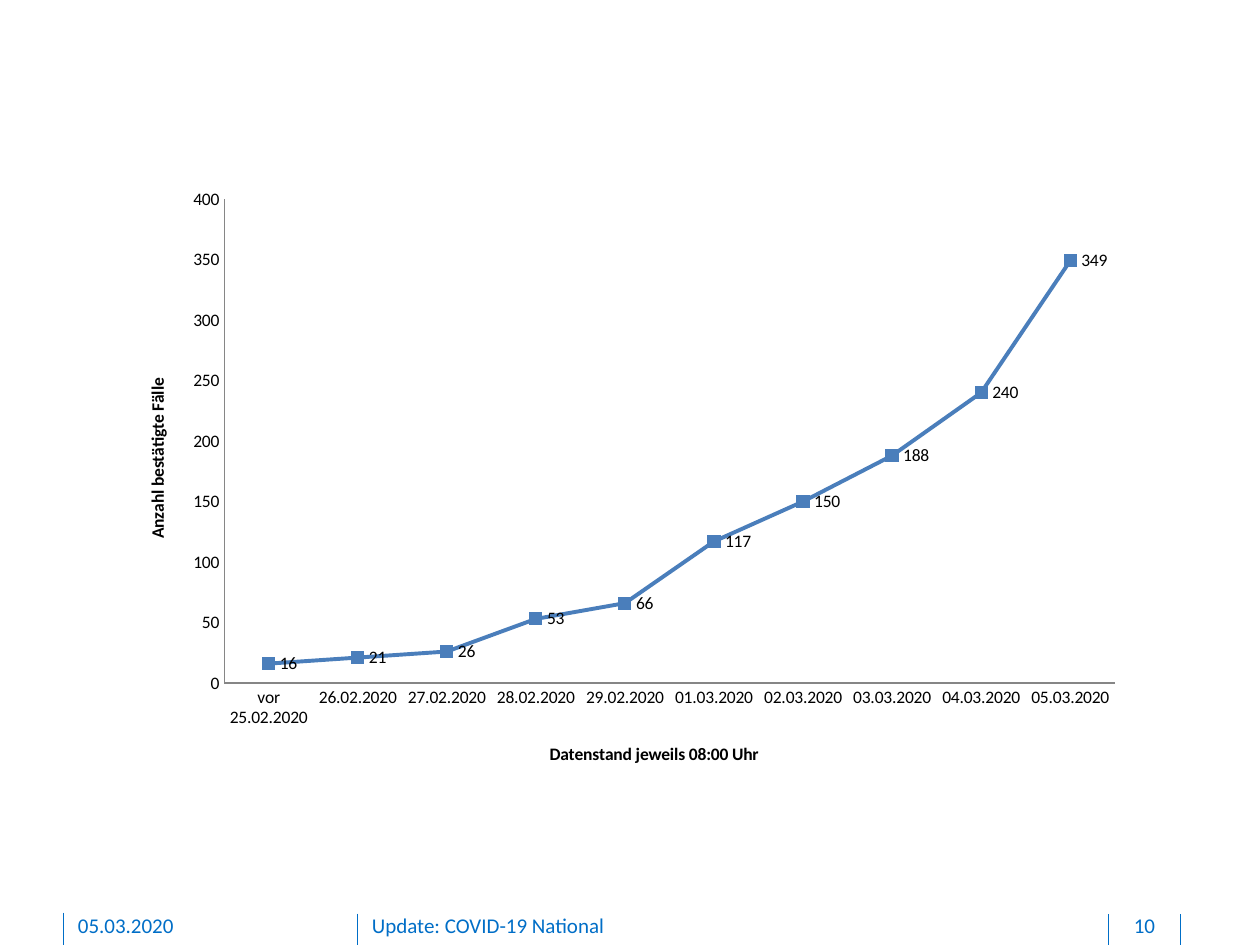
from dataclasses import dataclass

from lxml import etree
from pptx import Presentation
from pptx.chart.data import CategoryChartData
from pptx.dml.color import RGBColor
from pptx.enum.chart import XL_CHART_TYPE as ChartType
from pptx.enum.chart import XL_LABEL_POSITION as LabelPosition
from pptx.enum.chart import XL_MARKER_STYLE as MarkerStyle
from pptx.enum.chart import XL_TICK_MARK as TickMark
from pptx.enum.shapes import MSO_CONNECTOR as Connector
from pptx.enum.text import PP_ALIGN as Align
from pptx.oxml import parse_xml
from pptx.oxml.ns import nsdecls, qn
from pptx.util import Pt


@dataclass(frozen=True)
class Theme:
    font: str = "Calibri"
    footer: RGBColor = RGBColor(0x00, 0x6E, 0xC7)
    text: RGBColor = RGBColor(0x00, 0x00, 0x00)
    line: RGBColor = RGBColor(0x4A, 0x7E, 0xBB)
    marker: RGBColor = RGBColor(0x4F, 0x81, 0xBD)
    axis: RGBColor = RGBColor(0x86, 0x86, 0x86)
    footer_size: Pt = Pt(12)
    chart_size: Pt = Pt(10)


theme = Theme()
presentation = Presentation()
presentation.slide_width, presentation.slide_height = Pt(720), Pt(540)
slide = presentation.slides.add_slide(presentation.slide_layouts[6])

# Footer dividers, running to the lower edge of the slide
for x, top in [(204.5, 522), (36, 521.5), (674.5, 522.5), (633.5, 522.5)]:
    divider = slide.shapes.add_connector(Connector.STRAIGHT, Pt(x), Pt(top), Pt(x), Pt(540))
    divider.line.color.rgb = theme.footer
    divider.line.width = Pt(0.5)
    etree.SubElement(divider._element.spPr, qn("a:effectLst"))

# Footer texts
for text, left, width, align in [
    ("05.03.2020", 44.5, 146, Align.LEFT),
    ("Update: COVID-19 National", 212.5, 408, Align.LEFT),
    ("10", 634.5, 39, Align.CENTER),
]:
    frame = slide.shapes.add_textbox(Pt(left), Pt(521.5), Pt(width), Pt(15)).text_frame
    frame.word_wrap = True
    frame.margin_left = frame.margin_right = frame.margin_top = 0
    frame.margin_bottom = Pt(3.6)
    paragraph = frame.paragraphs[0]
    paragraph.text = text
    paragraph.alignment = align
    paragraph.font.name = theme.font
    paragraph.font.size = theme.footer_size
    paragraph.font.color.rgb = theme.footer

# Confirmed cases per day
cases = {
    "vor 25.02.2020": 16,
    "26.02.2020": 21,
    "27.02.2020": 26,
    "28.02.2020": 53,
    "29.02.2020": 66,
    "01.03.2020": 117,
    "02.03.2020": 150,
    "03.03.2020": 188,
    "04.03.2020": 240,
    "05.03.2020": 349,
}
chart_data = CategoryChartData()
chart_data.categories = list(cases)
chart_data.add_series("Series 1", list(cases.values()))
chart = slide.shapes.add_chart(
    ChartType.LINE_MARKERS, Pt(67.7), Pt(101.5), Pt(581), Pt(351.4), chart_data
).chart
chart.has_legend = False
chart.has_title = False
chart.font.name = theme.font
chart.font.size = theme.chart_size
chart.font.color.rgb = theme.text

for axis, title in [
    (chart.category_axis, "Datenstand jeweils 08:00 Uhr"),
    (chart.value_axis, "Anzahl bestätigte Fälle"),
]:
    axis.has_major_gridlines = False
    axis.major_tick_mark = axis.minor_tick_mark = TickMark.NONE
    axis.format.line.color.rgb = theme.axis
    axis.format.line.width = Pt(0.75)
    axis.axis_title.text_frame.text = title
    title_font = axis.axis_title.text_frame.paragraphs[0].font
    title_font.name = theme.font
    title_font.size = theme.chart_size
    title_font.bold = True
    title_font.color.rgb = theme.text
chart.value_axis.minimum_scale = 0
chart.value_axis.maximum_scale = 400
chart.value_axis.major_unit = 50

plot = chart.plots[0]
plot.vary_by_categories = False
series = plot.series[0]
series.smooth = False
series.format.line.color.rgb = theme.line
series.format.line.width = Pt(2.25)
series.marker.style = MarkerStyle.SQUARE
series.marker.size = 7
series.marker.format.fill.solid()
series.marker.format.fill.fore_color.rgb = theme.marker
series.marker.format.line.color.rgb = theme.line
labels = series.data_labels
labels.show_value = True
labels.position = LabelPosition.RIGHT

# Inner plot area as fractions of the chart
fractions = "".join(
    f'<c:{name} val="{value}"/>'
    for name, value in [("x", 0.104), ("y", 0.035), ("w", 0.876), ("h", 0.787)]
)
layout = parse_xml(
    f'<c:layout {nsdecls("c")}><c:manualLayout><c:layoutTarget val="inner"/>'
    f'<c:xMode val="edge"/><c:yMode val="edge"/>{fractions}</c:manualLayout></c:layout>'
)
plot_area = chart._chartSpace.chart.plotArea
for automatic in plot_area.findall(qn("c:layout")):
    plot_area.remove(automatic)
plot_area.insert(0, layout)

presentation.save("out.pptx")
